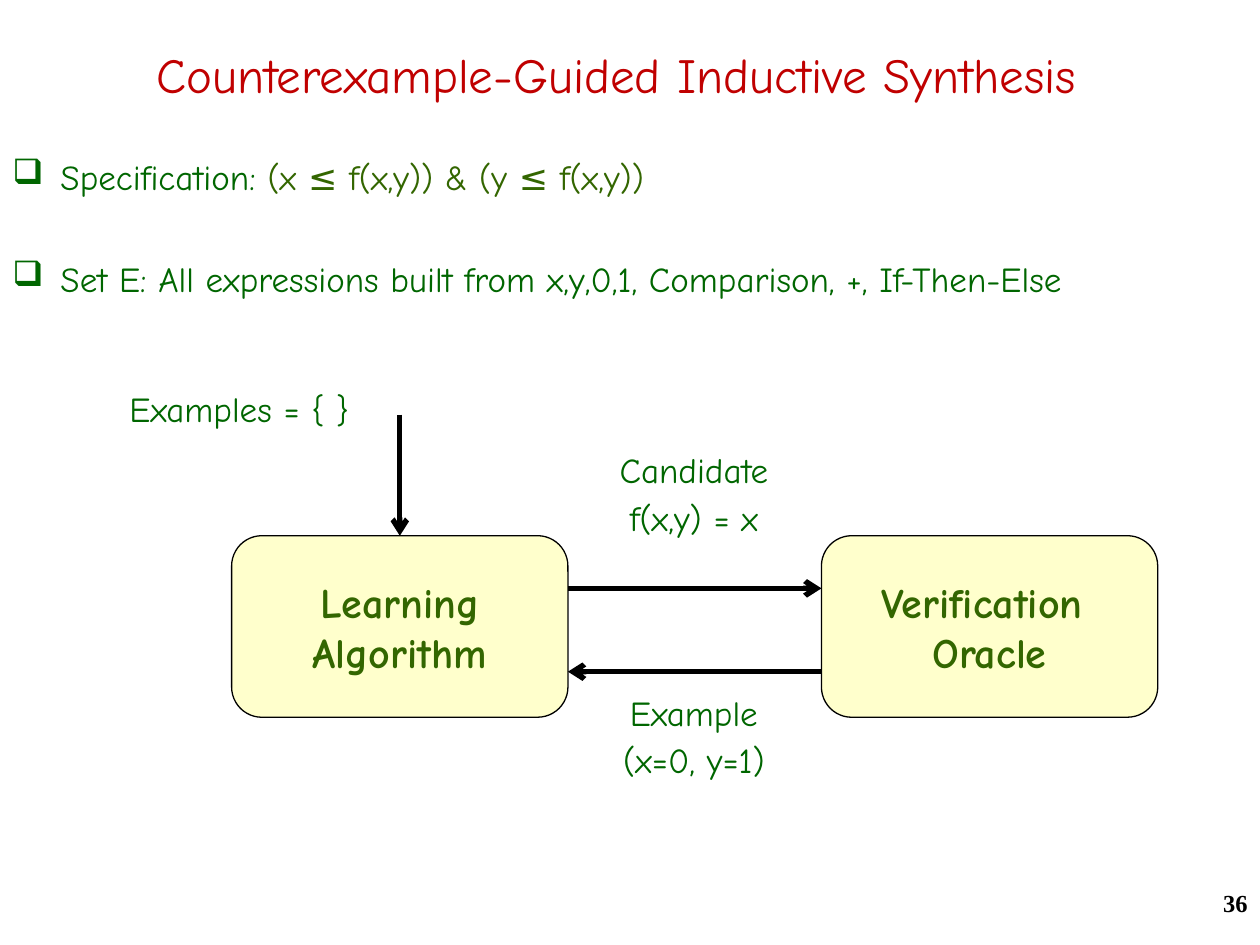
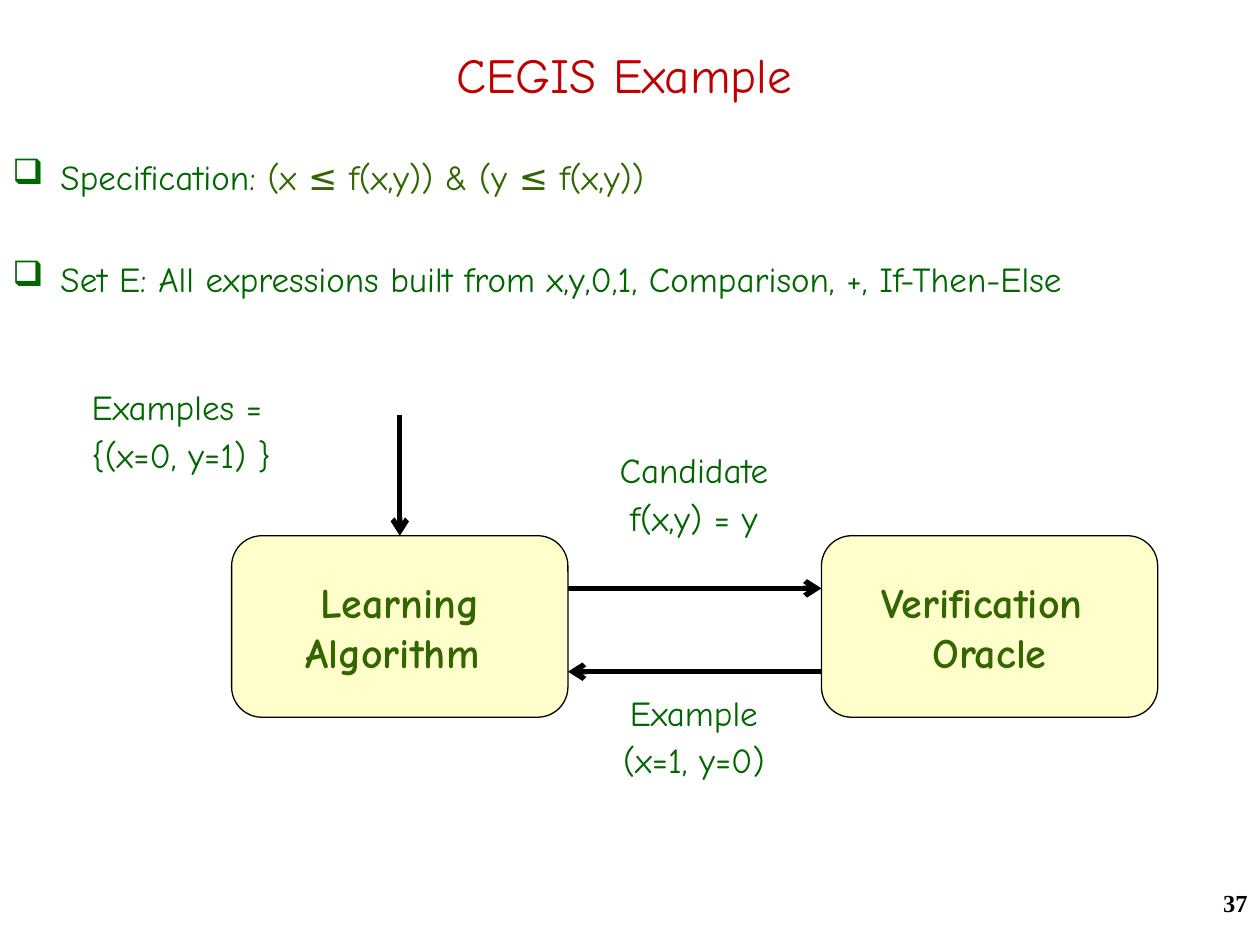
from lxml import etree
from pptx import Presentation
from pptx.dml.color import RGBColor
from pptx.enum.shapes import MSO_CONNECTOR, MSO_SHAPE
from pptx.enum.text import MSO_ANCHOR, PP_ALIGN
from pptx.oxml.ns import qn
from pptx.util import Cm, Pt

LEFT, CENTER, RIGHT = PP_ALIGN.LEFT, PP_ALIGN.CENTER, PP_ALIGN.RIGHT
TOP, MIDDLE = MSO_ANCHOR.TOP, MSO_ANCHOR.MIDDLE
STRAIGHT = MSO_CONNECTOR.STRAIGHT
ROUNDED = MSO_SHAPE.ROUNDED_RECTANGLE

RED, GREEN, OLIVE = "C00000", "006600", "336600"
CREAM, BLACK = "FFFFCC", "000000"
MAIN_FONT, NUMBER_FONT = "Comic Neue", "Times New Roman"

BULLET_INDENT = Cm(0.97)
BOX_TOP, BOX_WIDTH, BOX_HEIGHT = 10.8, 6.78, 3.66
LEARNER_LEFT, ORACLE_LEFT = 4.67, 16.56
LEARNER_RIGHT = LEARNER_LEFT + BOX_WIDTH
LABEL_STYLE = {"spacing": 0.8, "before": 8}

SPECIFICATION = [("Specification: ", GREEN), ("(x ≤ f(x,y)) & (y ≤ f(x,y))", OLIVE)]
EXPRESSIONS = "Set E: All expressions built from x,y,0,1, Comparison, +, If-Then-Else"


def rgb(value):
    return RGBColor.from_string(value)


def write_lines(shape, lines, size=20, color=GREEN, font=MAIN_FONT, bold=False,
                align=LEFT, anchor=TOP, wrap=True, spacing=None, before=0):
    """Write one paragraph a line; a line is a string or a list of (text, colour)."""
    frame = shape.text_frame
    frame.word_wrap = wrap
    frame.vertical_anchor = anchor
    for index, line in enumerate(lines):
        para = frame.add_paragraph() if index else frame.paragraphs[0]
        para.alignment = align
        para.line_spacing = spacing
        para.space_before = Pt(before)
        for text, span_color in [(line, color)] if isinstance(line, str) else line:
            span = para.add_run()
            span.text = text
            span.font.size = Pt(size)
            span.font.name = font
            span.font.bold = bold
            span.font.color.rgb = rgb(span_color)


def add_text(page, left, top, width, height, lines, **style):
    box = page.shapes.add_textbox(Cm(left), Cm(top), Cm(width), Cm(height))
    write_lines(box, lines, **style)
    return box


def add_bullets(page, lines):
    box = add_text(page, 0, 3.18, 25.4, 4.65, lines, spacing=0.8, before=39)
    for para in box.text_frame.paragraphs:
        properties = para._p.get_or_add_pPr()
        properties.set("marL", str(BULLET_INDENT))
        properties.set("indent", str(-BULLET_INDENT))
        bullet_color = etree.SubElement(properties, qn("a:buClr"))
        etree.SubElement(bullet_color, qn("a:srgbClr"), val=GREEN)
        etree.SubElement(properties, qn("a:buChar"), char="❑")


def add_component(page, left, lines):
    box = page.shapes.add_shape(ROUNDED, Cm(left), Cm(BOX_TOP),
                                Cm(BOX_WIDTH), Cm(BOX_HEIGHT))
    box.shadow.inherit = False
    box.fill.solid()
    box.fill.fore_color.rgb = rgb(CREAM)
    box.line.color.rgb = rgb(BLACK)
    box.line.width = Pt(0.75)
    write_lines(box, lines, size=24, color=OLIVE, bold=True,
                align=CENTER, anchor=MIDDLE, wrap=False)
    return box


def add_arrow(page, start_x, start_y, end_x, end_y):
    arrow = page.shapes.add_connector(STRAIGHT, Cm(start_x), Cm(start_y),
                                      Cm(end_x), Cm(end_y))
    arrow.line.color.rgb = rgb(BLACK)
    arrow.line.width = Pt(3)
    etree.SubElement(arrow.line._get_or_add_ln(), qn("a:tailEnd"), type="arrow")
    etree.SubElement(arrow._element.spPr, qn("a:effectLst"))
    return arrow


def add_synthesis_loop(page, learner_lines, candidate, example):
    """Draw the learner and the oracle with the messages they exchange."""
    learner = add_component(page, LEARNER_LEFT, learner_lines)
    add_component(page, ORACLE_LEFT, ["Verification ", "Oracle"])
    middle = LEARNER_LEFT + BOX_WIDTH / 2
    add_arrow(page, middle, 8.36, middle, BOX_TOP).end_connect(learner, 0)
    add_arrow(page, LEARNER_RIGHT, 11.86, ORACLE_LEFT, 11.86)
    add_arrow(page, ORACLE_LEFT, 13.54, LEARNER_RIGHT, 13.54)
    for top, lines in ((9.09, ["Candidate", candidate]), (13.97, ["Example", example])):
        add_text(page, 11.31, top, 5.36, 2.31, lines, align=CENTER, **LABEL_STYLE)


def add_page(deck, number, title):
    """Add a page with what all pages share: title, bullets and page number."""
    page = deck.slides.add_slide(deck.slide_layouts[6])
    add_text(page, 1.7, 0.64, 21.77, 1.7, [title], size=28, color=RED,
             align=CENTER, anchor=MIDDLE)
    add_bullets(page, [SPECIFICATION, EXPRESSIONS])
    add_text(page, 20.12, 17.78, 5.28, 1.27, [str(number)], size=14, color=BLACK,
             font=NUMBER_FONT, bold=True, align=RIGHT)
    return page


def main():
    deck = Presentation()
    deck.slide_width, deck.slide_height = Cm(25.4), Cm(19.05)

    page = add_page(deck, 36, "Counterexample-Guided Inductive Synthesis ")
    add_synthesis_loop(page, ["Learning", "Algorithm"], "f(x,y) = x", "(x=0, y=1)")
    add_text(page, 2.36, 7.85, 6.76, 1.17, ["Examples = { }"], **LABEL_STYLE)

    page = add_page(deck, 37, "CEGIS Example")
    add_synthesis_loop(page, ["Learning", "Algorithm "], "f(x,y) = y", "(x=1, y=0)")
    add_text(page, 1.6, 7.82, 6.53, 2.39, ["Examples =", "{(x=0, y=1) }"], **LABEL_STYLE)

    deck.save("out.pptx")


if __name__ == "__main__":
    main()
